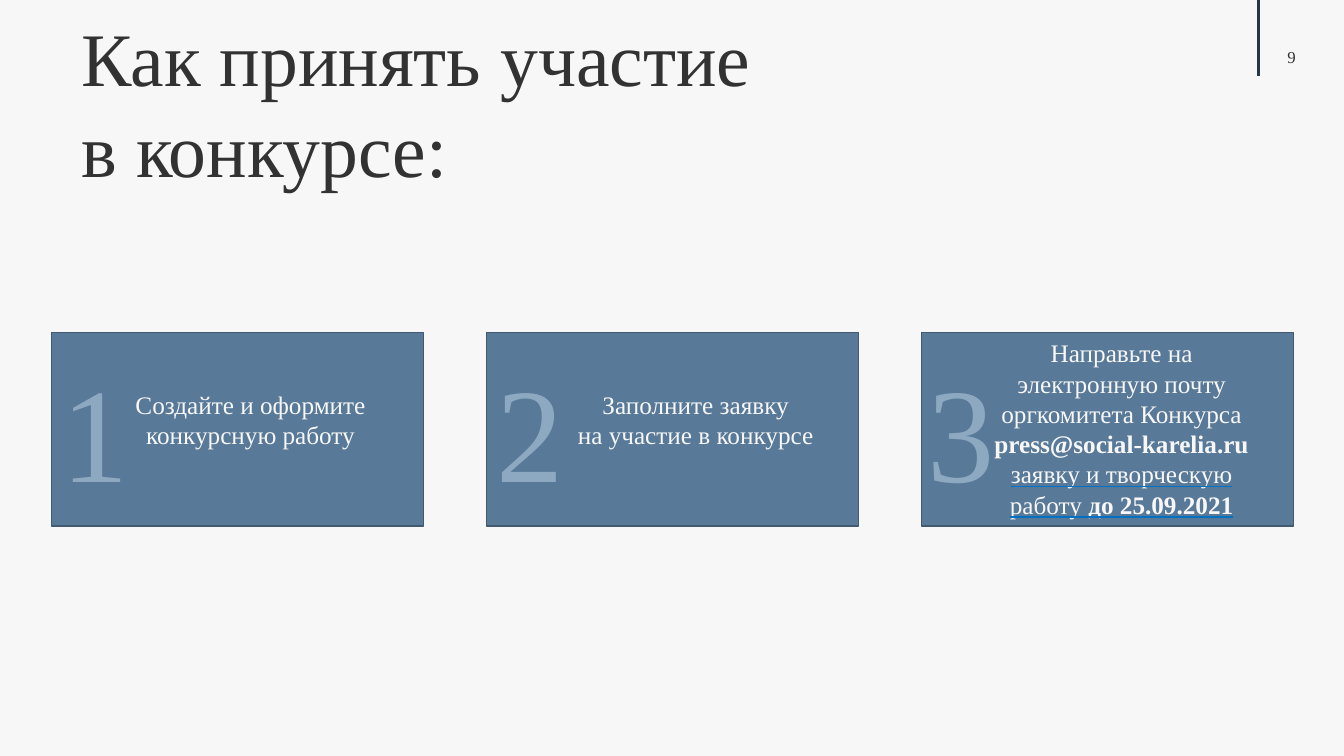
import pptx
import pptx.dml.color
import pptx.enum.shapes
import pptx.enum.text
import pptx.oxml
import pptx.oxml.ns
import pptx.util

Inches = pptx.util.Inches
Pt = pptx.util.Pt
ALIGN = pptx.enum.text.PP_ALIGN
FONT = "Times New Roman"
COLORS = {
    "background": "F7F7F7",
    "ink": "323232",
    "rule": "293744",
    "card": "587998",
    "card_edge": "415A70",
    "numeral": "8DA8C1",
    "card_text": "F7F7F7",
    "underline": "0070C0",
}
STEPS = [
    {"paragraphs": [[("Создайте и оформите конкурсную работу", "")]],
     "indent": 0.46, "drop": 0.51, "height": 0.71, "numeral_shift": 0},
    {"paragraphs": [[("Заполните заявку", "")], [("на участие в конкурсе", "")]],
     "indent": 0.56, "drop": 0.51, "height": 0.71, "numeral_shift": 0},
    {"paragraphs": [[("Направьте на электронную почту оргкомитета Конкурса ", ""),
                     ("press@social-karelia.ru", "b"),
                     (" заявку и творческую работу ", "u"),
                     ("до 25.09.2021", "bu")]],
     "indent": 0.47, "drop": 0, "height": 2.22, "numeral_shift": -0.04},
]


def color(name):
    """Return the named palette colour."""
    return pptx.dml.color.RGBColor.from_string(COLORS[name])


def color_underline(run, name):
    """Give the underline of a run its own colour."""
    fill = pptx.oxml.parse_xml(
        f'<a:uFill {pptx.oxml.ns.nsdecls("a")}><a:solidFill>'
        f'<a:srgbClr val="{COLORS[name]}"/></a:solidFill></a:uFill>')
    run.font._element.find(pptx.oxml.ns.qn("a:latin")).addprevious(fill)


def add_text(slide, box, paragraphs, size, ink, align=ALIGN.LEFT, wrap=True, insets=(0.1, 0.05)):
    """Add a text box of paragraphs, each a list of (text, style letters)."""
    frame = slide.shapes.add_textbox(*map(Inches, box)).text_frame
    frame.word_wrap = wrap
    frame.margin_left = frame.margin_right = Inches(insets[0])
    frame.margin_top = frame.margin_bottom = Inches(insets[1])
    for index, pieces in enumerate(paragraphs):
        paragraph = frame.paragraphs[0] if index == 0 else frame.add_paragraph()
        paragraph.alignment = align
        for text, style in pieces:
            run = paragraph.add_run()
            run.text = text
            run.font.name = FONT
            run.font.size = Pt(size)
            run.font.color.rgb = color(ink)
            run.font.bold = "b" in style
            if "u" in style:
                run.font.underline = True
                color_underline(run, "underline")


def add_page_mark(slide, left, top, width, height):
    """Draw the corner rule and the page number beside it."""
    rule_x = Inches(left + 0.07)
    rule = slide.shapes.add_connector(
        pptx.enum.shapes.MSO_CONNECTOR.STRAIGHT,
        rule_x, Inches(top), rule_x, Inches(top + height))
    rule.line.color.rgb = color("rule")
    rule.line.width = Pt(2.25)
    rule._element.spPr.append(
        pptx.oxml.parse_xml(f'<a:effectLst {pptx.oxml.ns.nsdecls("a")}/>'))
    add_text(slide, (left, top + 0.46, width, 0.2), [[("9", "")]], 12, "ink",
             align=ALIGN.CENTER, insets=(0.1, 0))


def add_title(slide, left, top, width, height):
    """Write the two-line heading."""
    add_text(slide, (left, top, width, height),
             [[("Как принять участие", "")], [("в конкурсе:", "")]], 54, "ink")


def add_card(slide, left, top, width, height):
    """Draw the rectangle behind one step."""
    card = slide.shapes.add_shape(
        pptx.enum.shapes.MSO_SHAPE.RECTANGLE, *map(Inches, (left, top, width, height)))
    card.shadow.inherit = False
    card.fill.solid()
    card.fill.fore_color.rgb = color("card")
    card.line.color.rgb = color("card_edge")
    card.line.width = Pt(1)


def add_steps(slide, left, top, width, height):
    """Spread the numbered steps evenly across the box."""
    card_width = 3.69
    pitch = (width - card_width) / (len(STEPS) - 1)
    for index, step in enumerate(STEPS):
        x = left + index * pitch
        add_card(slide, x, top, card_width, height)
        add_text(slide, (x + step["numeral_shift"], top + 0.1, 0.83, 1.72),
                 [[(str(index + 1), "")]], 96, "numeral", wrap=False)
        add_text(slide, (x + step["indent"], top + step["drop"], 3.03, step["height"]),
                 step["paragraphs"], 18, "card_text", align=ALIGN.CENTER)


def main():
    """Build and save the slide."""
    deck = pptx.Presentation()
    deck.slide_width = Inches(13.33)
    deck.slide_height = Inches(7.5)
    slide = deck.slides.add_slide(deck.slide_layouts[6])
    slide.background.fill.solid()
    slide.background.fill.fore_color.rgb = color("background")
    add_page_mark(slide, 12.41, 0, 0.8, 0.75)
    add_title(slide, 0.71, 0.06, 6.96, 1.92)
    add_steps(slide, 0.51, 3.3, 12.32, 1.92)
    deck.save("out.pptx")


if __name__ == "__main__":
    main()
